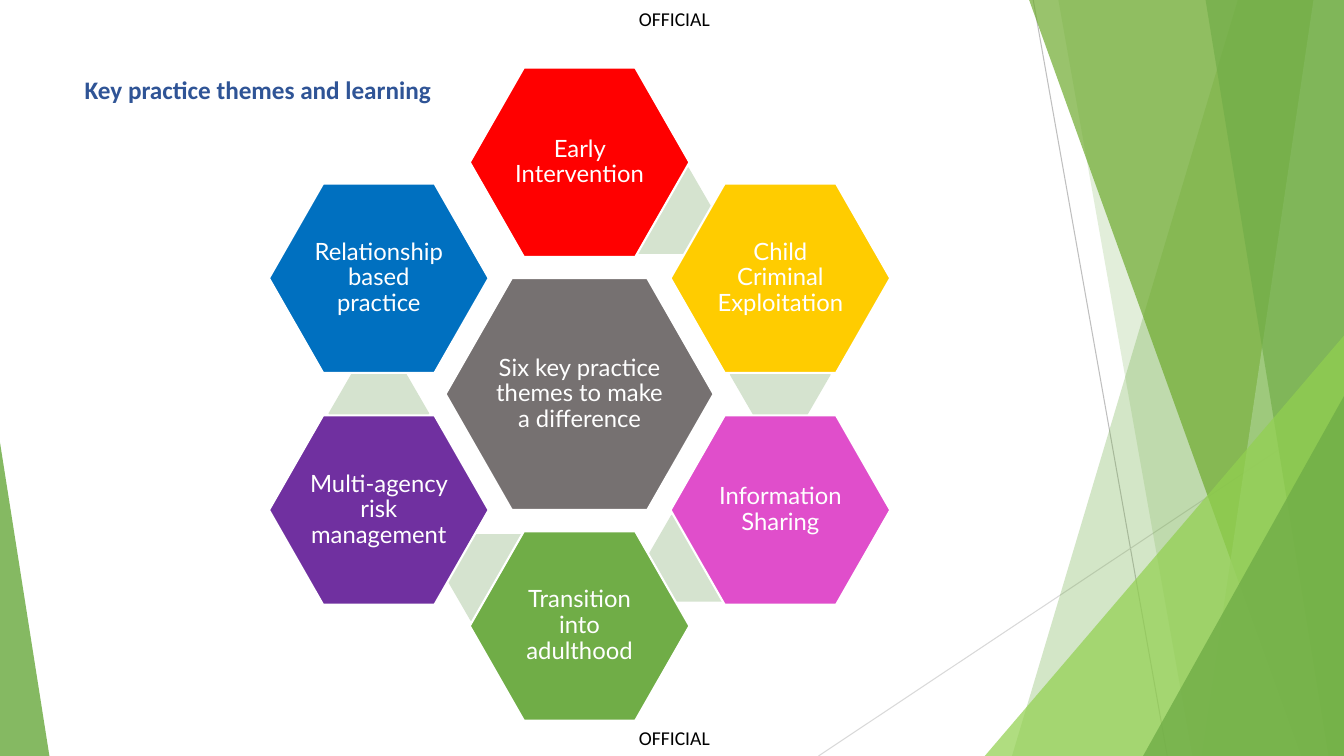
"""Build a slide with a ring of six practice themes around a centre."""
from math import cos, radians, sin

from lxml.etree import SubElement
from pptx import Presentation
from pptx.dml.color import RGBColor as Rgb
from pptx.enum.shapes import MSO_CONNECTOR as Link, MSO_SHAPE as Kind
from pptx.enum.text import MSO_ANCHOR as Anchor, MSO_AUTO_SIZE as Auto, PP_ALIGN as Align
from pptx.oxml.ns import qn
from pptx.util import Inches, Pt

COLS, ROWS = 133.33, 75
CELL = Inches(0.1)

HUES = {
    "black": "000000", "white": "FFFFFF", "navy": "2F5496", "grey": "767171",
    "red": "FF0000", "gold": "FFCC00", "pink": "E04ECB", "green": "70AD47",
    "plum": "7030A0", "blue": "0070C0", "pale": "D5E3CF", "lime": "92D050",
    "moss": "6EAA2E", "mint": "A9D18E", "ash": "BFBFBF", "fog": "D9D9D9",
}

THEMES = [
    ("Early Intervention", "red"),
    ("Child Criminal Exploitation", "gold"),
    ("Information Sharing", "pink"),
    ("Transition into adulthood", "green"),
    ("Multi-agency risk management", "plum"),
    ("Relationship based practice", "blue"),
]

LINES = [
    ((102.5, 0), (115.8, ROWS), "ash"),
    ((COLS, 40.3), (81.2, ROWS), "fog"),
]

BANDS = [
    (122.8, 100.4, "green", 30),
    (105, 118.3, "green", 20),
    (102.1, 129.1, "moss", 70),
    (130.3, 119.2, "mint", 70),
    (119.6, 131.8, "green", 65),
]

PEAKS = [
    (97.7, 33.3, 35.63, 1, "lime", 72),
    (113.4, 39.3, 19.93, 1, "green", 80),
    (0, 43.9, 4.9, 0, "green", 85),
]

MID = (57.5, 39.1)
RING, LINK = 23, 20


def cells(*nums):
    return [round(num * CELL) for num in nums]


def tint(name):
    return Rgb.from_string(HUES[name])


def spot(reach, turn):
    """Return the point at a distance and an angle from the centre."""
    return MID[0] + reach * cos(radians(turn)), MID[1] + reach * sin(radians(turn))


def write(frame, text, font="Calibri", size=14, hue="black", bold=False,
          align=Align.CENTER, anchor=Anchor.TOP, pad=0.0, space=1.0, wrap=True):
    frame.auto_size = Auto.NONE
    frame.word_wrap = wrap
    frame.vertical_anchor = anchor
    frame.margin_left = frame.margin_right = Inches(pad)
    frame.margin_top = frame.margin_bottom = Inches(min(pad, 0.05))
    para = frame.paragraphs[0]
    para.alignment, para.line_spacing = align, space
    run = para.add_run()
    run.text = text
    run.font.name, run.font.size, run.font.bold = font, Pt(size), bold
    run.font.color.rgb = tint(hue)


class Board:
    """Hold the deck, its slide and the style of each kind of element."""

    def __init__(self):
        self.deck = Presentation()
        self.deck.slide_width, self.deck.slide_height = cells(COLS, ROWS)
        self.slide = self.deck.slides.add_slide(self.deck.slide_layouts[5])
        self.shapes = self.slide.shapes

    def paint(self, shape, hue, clear=None, edge=None):
        shape.shadow.inherit = False
        shape.fill.solid()
        shape.fill.fore_color.rgb = tint(hue)
        if clear is not None:
            mark = shape.element.spPr.find(f".//{qn('a:srgbClr')}")
            SubElement(mark, qn("a:alpha")).set("val", str(clear * 1000))
        if edge:
            shape.line.color.rgb = tint(edge)
            shape.line.width = Pt(1.5)
        else:
            shape.line.fill.background()

    def title(self, text):
        head = self.shapes.title
        head.left, head.top, head.width, head.height = cells(7.4, 6.7, 94, 63.9)
        write(head.text_frame, text, size=18, hue="navy", bold=True,
              align=Align.LEFT, pad=0.1, space=1.07)

    def label(self, text, top):
        box = self.shapes.add_textbox(*cells(63.2, top, 7.4, 2.3))
        write(box.text_frame, text, wrap=False)

    def line(self, start, end, hue):
        link = self.shapes.add_connector(Link.STRAIGHT, *cells(*start, *end))
        link.line.color.rgb = tint(hue)
        link.line.width = Pt(0.75)
        SubElement(link.element.spPr, qn("a:effectLst"))

    def band(self, top, base, hue, clear):
        """Fill from a slanted edge to the right side of the slide."""
        pen = self.shapes.build_freeform(*cells(top, 0))
        rest = [(COLS, 0), (COLS, ROWS), (base, ROWS)]
        pen.add_line_segments([cells(*point) for point in rest], close=True)
        self.paint(pen.convert_to_shape(), hue, clear)

    def peak(self, left, top, width, tip, hue, clear):
        box = cells(left, top, width, ROWS - top)
        shape = self.shapes.add_shape(Kind.ISOSCELES_TRIANGLE, *box)
        shape.adjustments[0] = tip
        self.paint(shape, hue, clear)

    def hexa(self, point, width, height, hue, text=None):
        left, top = point[0] - width / 2, point[1] - height / 2
        shape = self.shapes.add_shape(Kind.HEXAGON, *cells(left, top, width, height))
        shape.adjustments[0] = 0.286 if text else 0.289
        self.paint(shape, hue, edge="white" if text else None)
        if text:
            write(shape.text_frame, text, font="Lato", size=17, hue="white",
                  anchor=Anchor.MIDDLE, pad=0.02, space=0.9)


def main():
    board = Board()
    for item in LINES:
        board.line(*item)
    for item in BANDS:
        board.band(*item)
    for item in PEAKS:
        board.peak(*item)
    for top in (0.7, 72):
        board.label("OFFICIAL", top)
    board.title("Key practice themes and learning")
    board.hexa(MID, 26.6, 23, "grey", "Six key practice themes to make a difference")
    for step, (text, hue) in enumerate(THEMES):
        turn = 60 * step
        if step < len(THEMES) - 1:
            board.hexa(spot(LINK, turn - 65.5), 10, 8.6, "pale")
        board.hexa(spot(RING, turn - 90), 21.8, 18.8, hue, text)
    board.deck.save("out.pptx")


if __name__ == "__main__":
    main()
